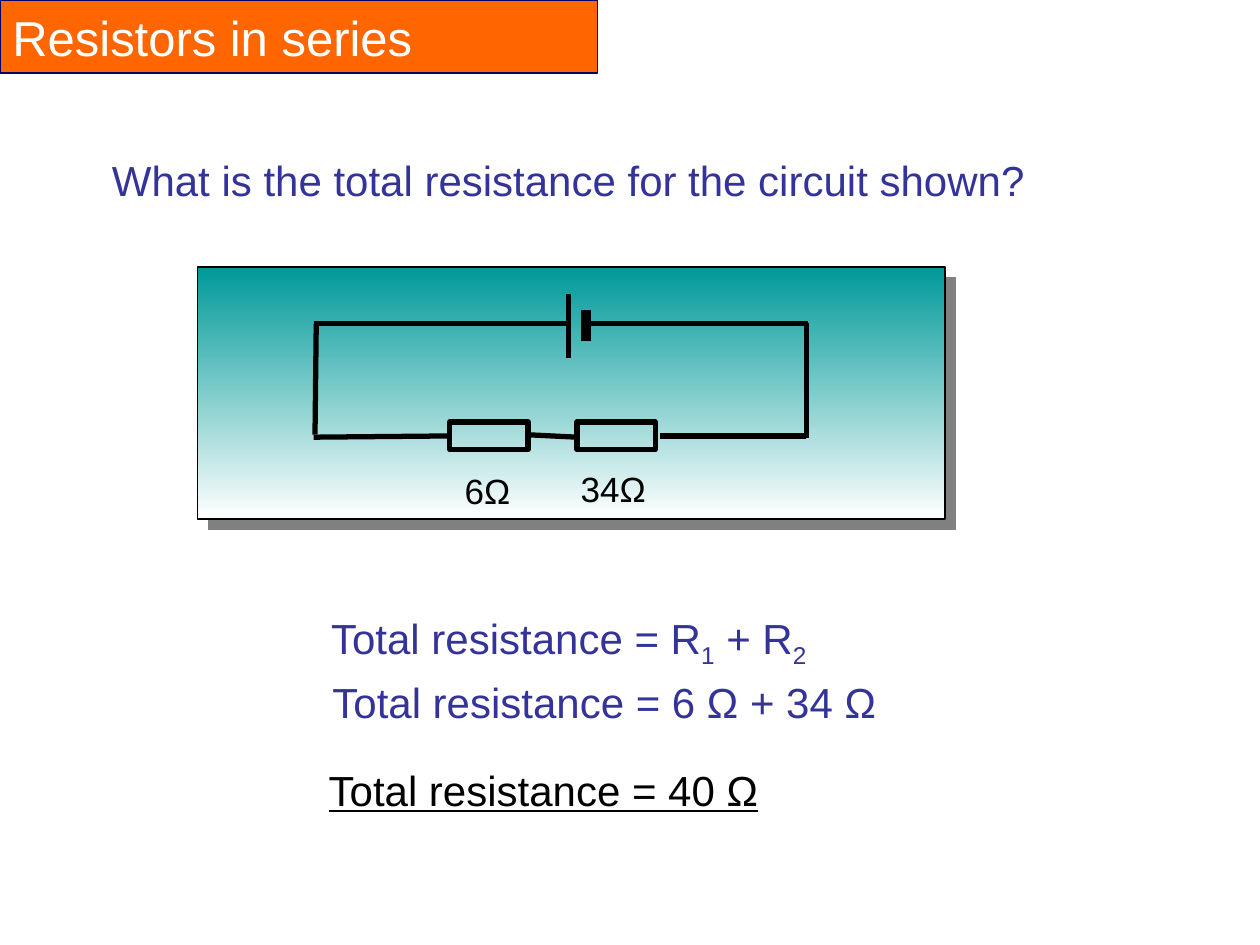
from dataclasses import dataclass

from lxml.etree import SubElement
from pptx import Presentation
from pptx.dml.color import RGBColor
from pptx.enum.shapes import MSO_CONNECTOR, MSO_SHAPE
from pptx.enum.text import MSO_ANCHOR, MSO_AUTO_SIZE, PP_ALIGN
from pptx.oxml.ns import qn
from pptx.util import Emu, Inches, Pt

COLUMNS, ROWS = 100, 75
CELL = Inches(0.1)
BLACK, WHITE, INDIGO = "000000", "FFFFFF", "333399"
ORANGE, NAVY, TEAL, GREY = "FF6600", "000066", "009999", "808080"


@dataclass(frozen=True)
class Area:
    column: float
    row: float
    columns: float
    rows: float


@dataclass(frozen=True)
class Wire:
    start: tuple[float, float]
    end: tuple[float, float]
    weight: float = 3


@dataclass(frozen=True)
class Label:
    area: Area
    spans: tuple[str, ...]
    size: float = 24
    color: str = INDIGO
    wrap: bool = False
    underline: bool = False


PANEL = Area(15.7, 21.2, 59.3, 20)
BANNER = Area(0, 0, 47.4, 5.8)
RESISTORS = [Area(column, 33.5, 6.2, 2.2) for column in (35.7, 45.8)]
WIRES = [
    Wire((45.1, 23.3), (45.1, 28.4)),
    Wire((46.5, 24.6), (46.5, 27.1), 6),
    Wire((46.5, 25.7), (64.1, 25.7)),
    Wire((64, 34.6), (52.4, 34.6)),
    Wire((25, 34.5), (25.1, 25.7)),
    Wire((24.9, 25.7), (45, 25.7)),
    Wire((45.8, 34.7), (41.8, 34.5)),
    Wire((35.7, 34.6), (24.9, 34.7)),
    Wire((64, 25.6), (64, 34.8)),
]
LABELS = [
    Label(Area(35.9, 36.8, 5.7, 4.3), ("6Ω",), 20, BLACK),
    Label(Area(45.1, 36.6, 7.2, 4.3), ("34Ω",), 20, BLACK),
    Label(Area(7.9, 11.8, 84, 5), ("What is the total resistance for the circuit shown?",), wrap=True),
    Label(Area(25.3, 48.1, 40.4, 5), ("Total resistance = R", "1", " + R", "2")),
    Label(Area(25.4, 53.2, 45.6, 5), ("Total resistance = 6 Ω + 34 Ω",)),
    Label(Area(25.1, 60.2, 36.5, 5), ("Total resistance = 40 Ω",), color=BLACK, wrap=True, underline=True),
]


def rgb(color: str) -> RGBColor:
    return RGBColor.from_string(color)


def cells(*counts: float) -> list[Emu]:
    return [Emu(round(count * CELL)) for count in counts]


def place(area: Area) -> list[Emu]:
    return cells(area.column, area.row, area.columns, area.rows)


def set_line(line, color: str, weight: float) -> None:
    line.color.rgb = rgb(color)
    line.width = Pt(weight)


def set_font(font, size: float, color: str) -> None:
    font.name = "Arial"
    font.size = Pt(size)
    font.color.rgb = rgb(color)


def add_box(page, area: Area, color: str = BLACK, weight: float = 0.75):
    box = page.shapes.add_shape(MSO_SHAPE.RECTANGLE, *place(area))
    box.shadow.inherit = False
    box.fill.background()
    set_line(box.line, color, weight)
    return box


def add_panel(page) -> None:
    panel = add_box(page, PANEL)
    panel.fill.gradient()
    panel.fill.gradient_angle = 270
    for stop, color in zip(panel.fill.gradient_stops, (TEAL, WHITE)):
        stop.color.rgb = rgb(color)
    effects = panel._element.spPr.find(qn("a:effectLst"))
    shadow = SubElement(
        effects, qn("a:outerShdw"), dist=str(Pt(8.5)), dir=str(45 * 60000), algn="ctr", rotWithShape="0"
    )
    SubElement(shadow, qn("a:srgbClr"), val=GREY)


def add_wire(page, wire: Wire) -> None:
    connector = page.shapes.add_connector(MSO_CONNECTOR.STRAIGHT, *cells(*wire.start, *wire.end))
    set_line(connector.line, BLACK, wire.weight)
    SubElement(connector._element.spPr, qn("a:effectLst"))


def add_label(page, label: Label) -> None:
    frame = page.shapes.add_textbox(*place(label.area)).text_frame
    frame.word_wrap = label.wrap
    frame.auto_size = MSO_AUTO_SIZE.SHAPE_TO_FIT_TEXT
    para = frame.paragraphs[0]
    set_font(para.font, label.size, label.color)
    if label.underline:
        para.font.underline = True
    for text in label.spans:
        span = para.add_run()
        span.text = text
        set_font(span.font, label.size, label.color)
        if label.underline:
            span.font.underline = True
        if text.isdigit():
            span._r.get_or_add_rPr().set("baseline", "-25000")


def add_banner(page) -> None:
    banner = add_box(page, BANNER, NAVY)
    banner.fill.solid()
    banner.fill.fore_color.rgb = rgb(ORANGE)
    frame = banner.text_frame
    frame.vertical_anchor = MSO_ANCHOR.MIDDLE
    para = frame.paragraphs[0]
    para.text = "Resistors in series"
    para.alignment = PP_ALIGN.LEFT
    set_font(para.font, 28, WHITE)


def main() -> None:
    deck = Presentation()
    deck.slide_width, deck.slide_height = cells(COLUMNS, ROWS)
    page = deck.slides.add_slide(deck.slide_layouts[6])
    add_panel(page)
    for wire in WIRES:
        add_wire(page, wire)
    for resistor in RESISTORS:
        add_box(page, resistor, weight=3)
    for label in LABELS:
        add_label(page, label)
    add_banner(page)
    deck.save("out.pptx")


if __name__ == "__main__":
    main()
